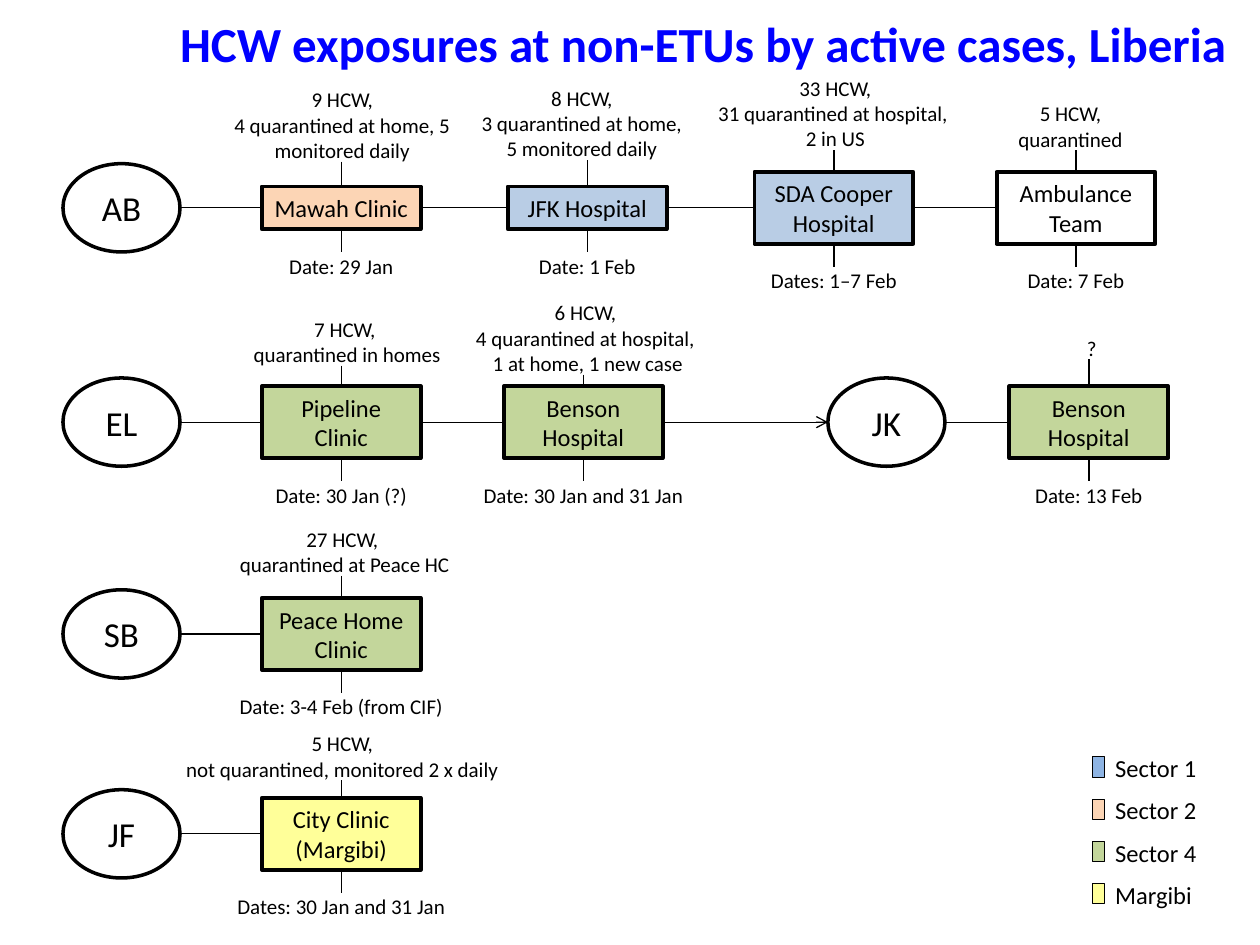
from itertools import pairwise
from typing import NamedTuple

from lxml import etree
from pptx import Presentation
from pptx.dml.color import RGBColor
from pptx.enum.shapes import MSO_CONNECTOR, MSO_SHAPE
from pptx.enum.text import MSO_ANCHOR, MSO_AUTO_SIZE, PP_ALIGN
from pptx.oxml.ns import qn
from pptx.util import Cm, Pt

RECT, OVAL = MSO_SHAPE.RECTANGLE, MSO_SHAPE.OVAL
STRAIGHT = MSO_CONNECTOR.STRAIGHT
LEFT, CENTER = PP_ALIGN.LEFT, PP_ALIGN.CENTER
MIDDLE = MSO_ANCHOR.MIDDLE
GROW = MSO_AUTO_SIZE.SHAPE_TO_FIT_TEXT

FONT = "Calibri"
BLACK, WHITE, TITLE_BLUE = "000000", "FFFFFF", "0000FF"
SECTOR_1, SECTOR_2, SECTOR_4, MARGIBI = "B9CDE5", "FCD5B5", "C3D69B", "FFFF99"
LEGEND_BLUE = "8EB4E3"

CASE_W, CASE_H = 2.36, 1.78
SITE_W, SITE_H, SITE_H_LOW = 3.2, 1.45, 0.86
DATE_W, DATE_H, DATE_GAP = 4.85, 0.76, 0.36
STEM, NOTE_OVERLAP = 0.46, 0.15


class Case(NamedTuple):
    """A patient, drawn as an ellipse."""
    name: str
    left: float = 1.27


class Site(NamedTuple):
    """A health facility with the exposure note above and the date below."""
    name: str
    color: str
    left: float
    date: str
    note: str
    note_lines: int
    note_center: float
    note_top: float
    note_width: float = 5.51
    height: float = SITE_H


ROWS = [
    (4.19, [
        Case("AB"),
        Site("Mawah Clinic", SECTOR_2, 5.28, "Date: 29 Jan",
             "9 HCW,\n4 quarantined at home, 5 monitored daily",
             3, 6.9, 1.63, height=SITE_H_LOW),
        Site("JFK Hospital", SECTOR_1, 10.24, "Date: 1 Feb",
             "8 HCW,\n3 quarantined at home, 5 monitored daily",
             3, 11.73, 1.6, 4.6, SITE_H_LOW),
        Site("SDA Cooper Hospital", SECTOR_1, 15.21, "Dates: 1–7 Feb",
             "33 HCW,\n31 quarantined at hospital, \v2 in US",
             3, 16.84, 1.4, 5.74),
        Site("Ambulance Team", WHITE, 20.09, "Date: 7 Feb",
             "5 HCW,\nquarantined", 2, 21.58, 1.91, 3.38),
    ]),
    (8.51, [
        Case("EL"),
        Site("Pipeline Clinic", SECTOR_4, 5.28, "Date: 30 Jan (?)",
             "7 HCW, \nquarantined in homes", 2, 7.0, 6.25),
        Site("Benson Hospital", SECTOR_4, 10.16, "Date: 30 Jan and 31 Jan",
             "6 HCW, \n4 quarantined at hospital, \v1 at home, 1 new case",
             3, 11.85, 5.92),
        Case("JK", 16.69),
        Site("Benson Hospital", SECTOR_4, 20.35, "Date: 13 Feb",
             "?", 1, 22.01, 6.63, 1.7),
    ]),
    (12.78, [
        Case("SB"),
        Site("Peace Home Clinic", SECTOR_4, 5.28, "Date: 3-4 Feb (from CIF)",
             "27 HCW, \nquarantined at Peace HC", 2, 6.95, 10.49),
    ]),
    (16.81, [
        Case("JF"),
        Site("City Clinic (Margibi)", MARGIBI, 5.28, "Dates: 30 Jan and 31 Jan",
             "5 HCW,\nnot quarantined, monitored 2 x daily",
             2, 6.9, 14.61, 7.85),
    ]),
]

LEGEND = [("Sector 1", LEGEND_BLUE), ("Sector 2", SECTOR_2),
          ("Sector 4", SECTOR_4), ("Margibi", MARGIBI)]


def rgb(color):
    """Turn a hex string into a colour."""
    return RGBColor.from_string(color)


def write(s, text, size, align, color=BLACK, bold=False):
    """Fill a shape with text in one style."""
    tf = s.text_frame
    tf.text = text
    for p in tf.paragraphs:
        p.alignment = align
        for r in p.runs:
            r.font.name = FONT
            r.font.size = Pt(size)
            r.font.bold = bold
            r.font.color.rgb = rgb(color)


def add_text(slide, left, top, width, height, text, size, align=CENTER, **style):
    """Add a wrapping text box that grows with its text."""
    s = slide.shapes.add_textbox(Cm(left), Cm(top), Cm(width), Cm(height))
    s.text_frame.word_wrap = True
    s.text_frame.auto_size = GROW
    write(s, text, size, align, **style)
    return s


def add_block(slide, kind, left, top, width, height, fill, weight):
    """Add a filled shape with a black outline."""
    s = slide.shapes.add_shape(kind, Cm(left), Cm(top), Cm(width), Cm(height))
    s.shadow.inherit = False
    s.fill.solid()
    s.fill.fore_color.rgb = rgb(fill)
    s.line.color.rgb = rgb(BLACK)
    s.line.width = Pt(weight)
    return s


def add_line(slide, x1, y1, x2, y2):
    """Add a thin black straight connector."""
    c = slide.shapes.add_connector(STRAIGHT, Cm(x1), Cm(y1), Cm(x2), Cm(y2))
    c.line.color.rgb = rgb(BLACK)
    c.line.width = Pt(0.75)
    etree.SubElement(c._element.spPr, qn("a:effectLst"))
    return c


def add_link(slide, start, end, arrow):
    """Join the right side of one shape to the left side of the next."""
    c = add_line(slide, 0, 0, 1, 0)
    c.begin_connect(start, 3)
    c.end_connect(end, 1)
    if arrow:
        etree.SubElement(c.line._get_or_add_ln(), qn("a:tailEnd"), type="arrow")


def add_case(slide, case, middle):
    """Add the ellipse of a patient."""
    s = add_block(slide, OVAL, case.left, middle - CASE_H / 2,
                  CASE_W, CASE_H, WHITE, 2)
    write(s, case.name, 20, CENTER)
    return s


def add_site(slide, site, middle):
    """Add a facility box with its note, date and two stems."""
    top, bottom = middle - site.height / 2, middle + site.height / 2
    x = site.left + SITE_W / 2
    s = add_block(slide, RECT, site.left, top, SITE_W, site.height, site.color, 2.25)
    write(s, site.name, 14, CENTER)

    note_height = 0.25 + 0.51 * site.note_lines
    add_text(slide, site.note_center - site.note_width / 2, site.note_top,
             site.note_width, note_height, site.note, 12)
    stem_top = site.note_top + note_height - NOTE_OVERLAP
    add_line(slide, x, stem_top, x, top).end_connect(s, 0)

    add_text(slide, x - DATE_W / 2, bottom + DATE_GAP, DATE_W, DATE_H, site.date, 12)
    add_line(slide, x, bottom, x, bottom + STEM).begin_connect(s, 2)
    return s


def add_row(slide, middle, items):
    """Add one chain of patients and facilities."""
    shapes = [add_case(slide, item, middle) if isinstance(item, Case)
              else add_site(slide, item, middle) for item in items]
    for (start, end), item in zip(pairwise(shapes), items[1:]):
        add_link(slide, start, end, isinstance(item, Case))


def add_legend(slide):
    """Add the colour key."""
    for i, (label, color) in enumerate(LEGEND):
        top = 15.06 + 0.85 * i
        add_block(slide, RECT, 22.02, top + 0.2, 0.25, 0.41, color, 0.5)
        add_text(slide, 22.23, top, 3.17, 0.86, label, 14, LEFT)


def main():
    """Build the slide and save it."""
    prs = Presentation()
    prs.slide_width, prs.slide_height = Cm(25.4), Cm(19.05)
    slide = prs.slides.add_slide(prs.slide_layouts[6])
    title = add_text(slide, 3.38, 0.15, 21.84, 1.45,
                     "HCW exposures at non-ETUs by active cases, Liberia",
                     28, LEFT, color=TITLE_BLUE, bold=True)
    title.text_frame.word_wrap = False
    title.text_frame.vertical_anchor = MIDDLE
    for middle, items in ROWS:
        add_row(slide, middle, items)
    add_legend(slide)
    prs.save("out.pptx")


if __name__ == "__main__":
    main()
